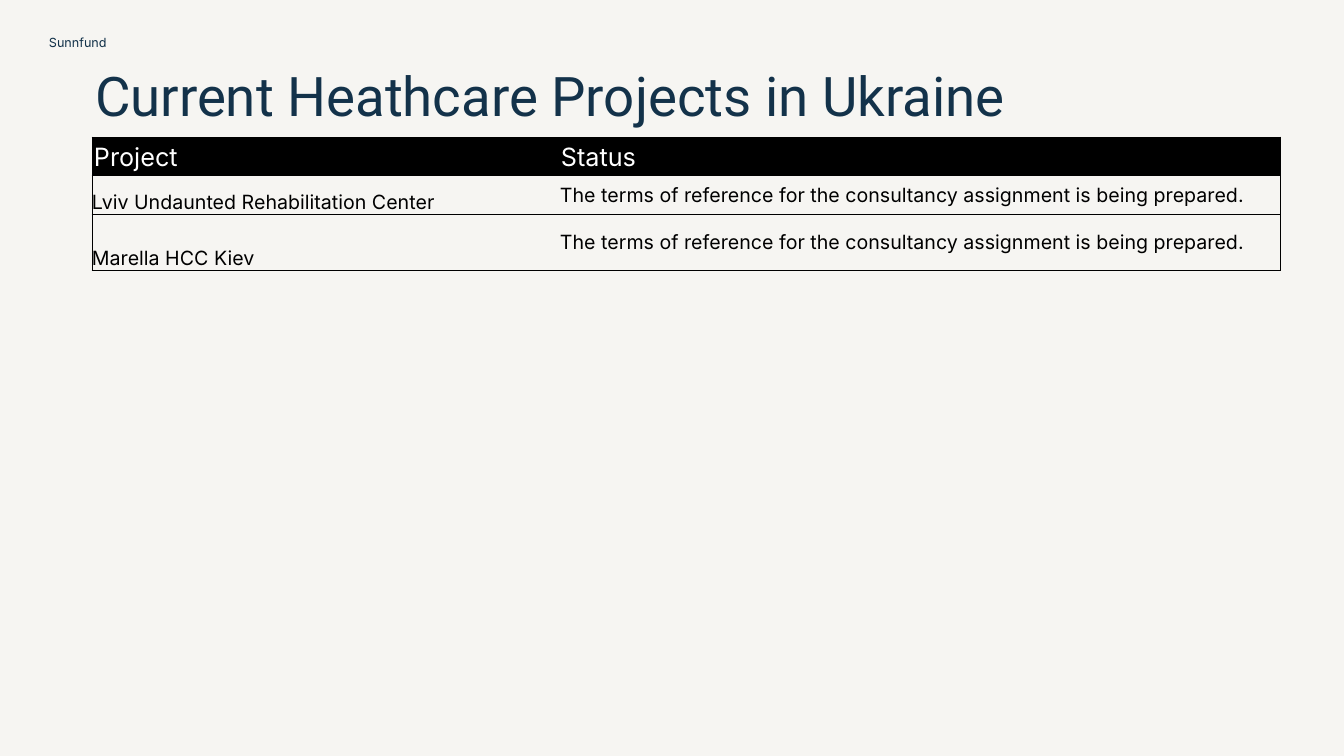
from dataclasses import dataclass

from lxml.etree import SubElement
from pptx import Presentation
from pptx.dml.color import RGBColor
from pptx.enum.text import MSO_ANCHOR as Anchor, MSO_AUTO_SIZE as Fit, PP_ALIGN as Align
from pptx.oxml.ns import qn
from pptx.util import Emu, Pt

SCALE = 12192000 / 1344  # EMU in one px
NAVY, BLACK, WHITE, PAPER = "13324A", "000000", "FFFFFF", "F6F5F2"
PLAIN = "{2D5ABB26-0587-4C30-8999-92F81FD0307C}"  # table style without grid
SIDES = ("left", "top", "right", "bottom")
TERMS = "The terms of reference for the consultancy assignment is being prepared."
ROWS = [
    ("Project", "Status"),
    ("Lviv Undaunted Rehabilitation Center", TERMS),
    ("Marella HCC Kiev", TERMS),
]
COLS = (467, 721)
HIGH = (31, 39, 56)


@dataclass
class Look:
    font: str
    size: int
    color: str
    anchor: Anchor
    inset: tuple[int, int, int, int] = (0, 0, 0, 0)
    space: float = 1.0


LABEL = Look("Inter", 9, NAVY, Anchor.BOTTOM)
TITLE = Look("Roboto", 39, NAVY, Anchor.BOTTOM, (0, 5, 10, 5), 0.9)
HEAD = Look("Inter", 18, WHITE, Anchor.MIDDLE, (2, 5, 2, 3))
NAME = Look("Inter", 14, BLACK, Anchor.BOTTOM)
STATE = Look("Inter", 14, BLACK, Anchor.MIDDLE, (1, 1, 1, 0))


def px(n: int) -> Emu:
    return Emu(round(n * SCALE))


def paint(color, code: str) -> None:
    color.rgb = RGBColor.from_string(code)


def apply(item, values: dict) -> None:
    for key, value in values.items():
        setattr(item, key, value)


def write(frame, box, text: str, look: Look) -> None:
    """Put text in a frame; box holds its margins and anchor."""
    frame.text = text
    apply(box, {f"margin_{s}": px(n) for s, n in zip(SIDES, look.inset)})
    apply(box, {"vertical_anchor": look.anchor})
    line = frame.paragraphs[0]
    apply(line, {"alignment": Align.LEFT, "line_spacing": look.space})
    font = line.runs[0].font
    apply(font, {"name": look.font, "size": Pt(look.size), "bold": False})
    paint(font.color, look.color)


def place(shape, left: int, top: int, width: int, height: int) -> None:
    apply(shape, {"left": px(left), "top": px(top),
                  "width": px(width), "height": px(height)})


def edge(cell, sides: str) -> None:
    """Draw thin black borders on the sides named by L, R, T, B."""
    props = cell._tc.get_or_add_tcPr()
    for side in sides:
        line = SubElement(props, qn(f"a:ln{side}"), w=str(Pt(0.5)))
        fill = SubElement(line, qn("a:solidFill"))
        SubElement(fill, qn("a:srgbClr"), val=BLACK)


def grid(slide) -> None:
    shape = slide.shapes.add_table(len(ROWS), len(COLS), px(92), px(137),
                                   px(sum(COLS)), px(sum(HIGH)))
    table = shape.table
    apply(table, {"first_row": False, "horz_banding": False})
    table._tbl.tblPr.find(qn("a:tableStyleId")).text = PLAIN
    for col, width in zip(table.columns, COLS):
        col.width = px(width)
    for row, height in zip(table.rows, HIGH):
        row.height = px(height)
    for r, texts in enumerate(ROWS):
        for c, text in enumerate(texts):
            cell = table.cell(r, c)
            look = (NAME, STATE)[c] if r else HEAD
            write(cell.text_frame, cell, text, look)
            edge(cell, "LR"[c] + ("T" if r < 2 else "") + ("B" if r else ""))
            if r:
                cell.fill.background()
            else:
                cell.fill.solid()
                paint(cell.fill.fore_color, BLACK)


def main() -> None:
    deck = Presentation()
    apply(deck, {"slide_width": px(1344), "slide_height": px(756)})
    slide = deck.slides.add_slide(deck.slide_layouts[5])
    back = slide.background.fill
    back.solid()
    paint(back.fore_color, PAPER)

    # Label and title
    label = slide.shapes.add_textbox(px(49), px(26), px(90), px(24))
    title = slide.shapes.title
    place(title, 95, 54, 1153, 79)
    for shape, text, look in (
        (label, "Sunnfund", LABEL),
        (title, "Current Heathcare Projects in Ukraine", TITLE),
    ):
        frame = shape.text_frame
        apply(frame, {"word_wrap": True, "auto_size": Fit.NONE})
        write(frame, frame, text, look)

    # Project table
    grid(slide)
    deck.save("out.pptx")


if __name__ == "__main__":
    main()
